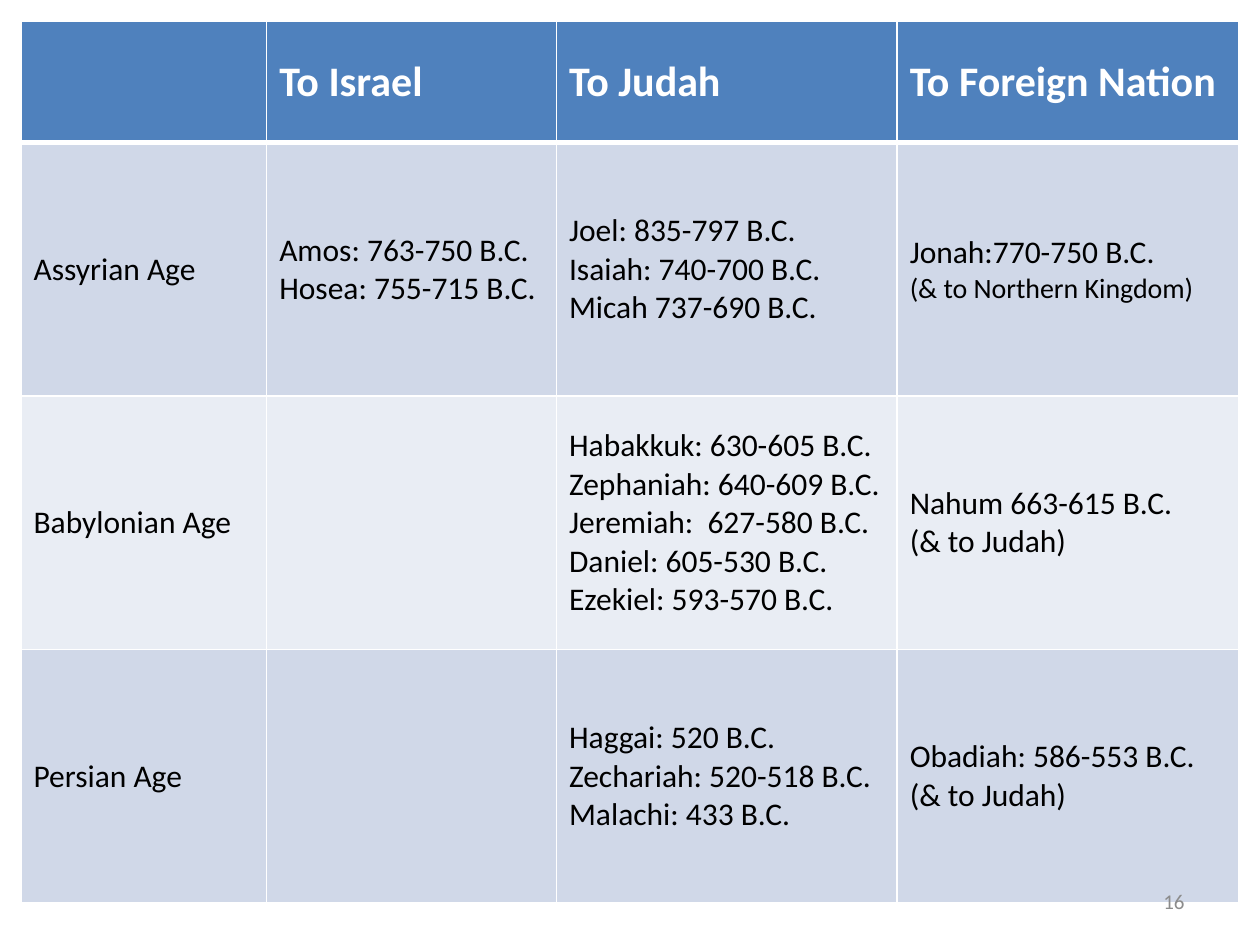
from lxml.etree import SubElement
from pptx import Presentation
from pptx.dml.color import RGBColor
from pptx.enum.text import MSO_VERTICAL_ANCHOR as Anchor, PP_PARAGRAPH_ALIGNMENT as Align
from pptx.oxml.ns import qn
from pptx.util import Pt

COLORS = {
    "header": "4F81BD",
    "odd_row": "D0D8E8",
    "even_row": "E9EDF4",
    "border": "FFFFFF",
    "header_text": "FFFFFF",
    "body_text": "000000",
    "page_number": "8C8C8C",
}
HEADER_FONT = {"name": "Calibri", "size": Pt(24), "bold": True}
BODY_FONT = {"name": "Calibri", "size": Pt(18), "bold": False}
NOTE_FONT = {**BODY_FONT, "size": Pt(16)}
NUMBER_FONT = {"name": "Calibri", "size": Pt(12)}
SMALL_NOTE = "(& to Northern Kingdom)"

COLUMN_WIDTHS = [140.4, 165.6, 194.7, 195.3]
ROW_HEIGHTS = [69.6, 144.8, 144.8, 144.8]
ROWS = [
    ["", "To Israel", "To Judah", "To Foreign Nation"],
    [
        "Assyrian Age",
        "Amos: 763-750 B.C.\nHosea: 755-715 B.C.",
        "Joel: 835-797 B.C.\nIsaiah: 740-700 B.C.\nMicah 737-690 B.C.",
        "Jonah:770-750 B.C.\n" + SMALL_NOTE,
    ],
    [
        "Babylonian Age",
        "",
        "Habakkuk: 630-605 B.C.\nZephaniah: 640-609 B.C.\nJeremiah:  627-580 B.C.\n"
        "Daniel: 605-530 B.C.\nEzekiel: 593-570 B.C.",
        "Nahum 663-615 B.C.\n(& to Judah)",
    ],
    [
        "Persian Age",
        "",
        "Haggai: 520 B.C.\nZechariah: 520-518 B.C.\nMalachi: 433 B.C.",
        "Obadiah: 586-553 B.C.\n(& to Judah)",
    ],
]


def format_font(font, values, color):
    for name, value in values.items():
        setattr(font, name, value)
    font.color.rgb = RGBColor.from_string(COLORS[color])


def add_borders(cell, widths):
    properties = cell._tc.get_or_add_tcPr()
    for side, width in widths.items():
        line = SubElement(properties, qn(f"a:ln{side}"), w=str(Pt(width)))
        fill = SubElement(line, qn("a:solidFill"))
        SubElement(fill, qn("a:srgbClr"), val=COLORS["border"])


presentation = Presentation()
presentation.slide_width = Pt(720)
presentation.slide_height = Pt(540)
slide = presentation.slides.add_slide(presentation.slide_layouts[6])

table = slide.shapes.add_table(
    len(ROWS), len(COLUMN_WIDTHS), Pt(12), Pt(12), Pt(sum(COLUMN_WIDTHS)), Pt(sum(ROW_HEIGHTS))
).table
for column, width in zip(table.columns, COLUMN_WIDTHS):
    column.width = Pt(width)
for row, height in zip(table.rows, ROW_HEIGHTS):
    row.height = Pt(height)

for row_index, texts in enumerate(ROWS):
    is_header = row_index == 0
    row_color = "header" if is_header else "odd_row" if row_index % 2 else "even_row"
    text_color = "header_text" if is_header else "body_text"
    borders = {"L": 1, "R": 1, "T": 3 if row_index == 1 else 1, "B": 3 if is_header else 1}
    for column_index, text in enumerate(texts):
        cell = table.cell(row_index, column_index)
        add_borders(cell, borders)
        cell.fill.solid()
        cell.fill.fore_color.rgb = RGBColor.from_string(COLORS[row_color])
        cell.vertical_anchor = Anchor.MIDDLE
        cell.text = text
        for paragraph in cell.text_frame.paragraphs:
            for run in paragraph.runs:
                body_font = NOTE_FONT if run.text == SMALL_NOTE else BODY_FONT
                format_font(run.font, HEADER_FONT if is_header else body_font, text_color)

page_number = slide.shapes.add_textbox(Pt(516), Pt(500.5), Pt(168), Pt(28.75))
page_number.text_frame.word_wrap = True
page_number.text_frame.vertical_anchor = Anchor.MIDDLE
paragraph = page_number.text_frame.paragraphs[0]
paragraph.alignment = Align.RIGHT
run = paragraph.add_run()
run.text = "16"
format_font(run.font, NUMBER_FONT, "page_number")

presentation.save("out.pptx")
